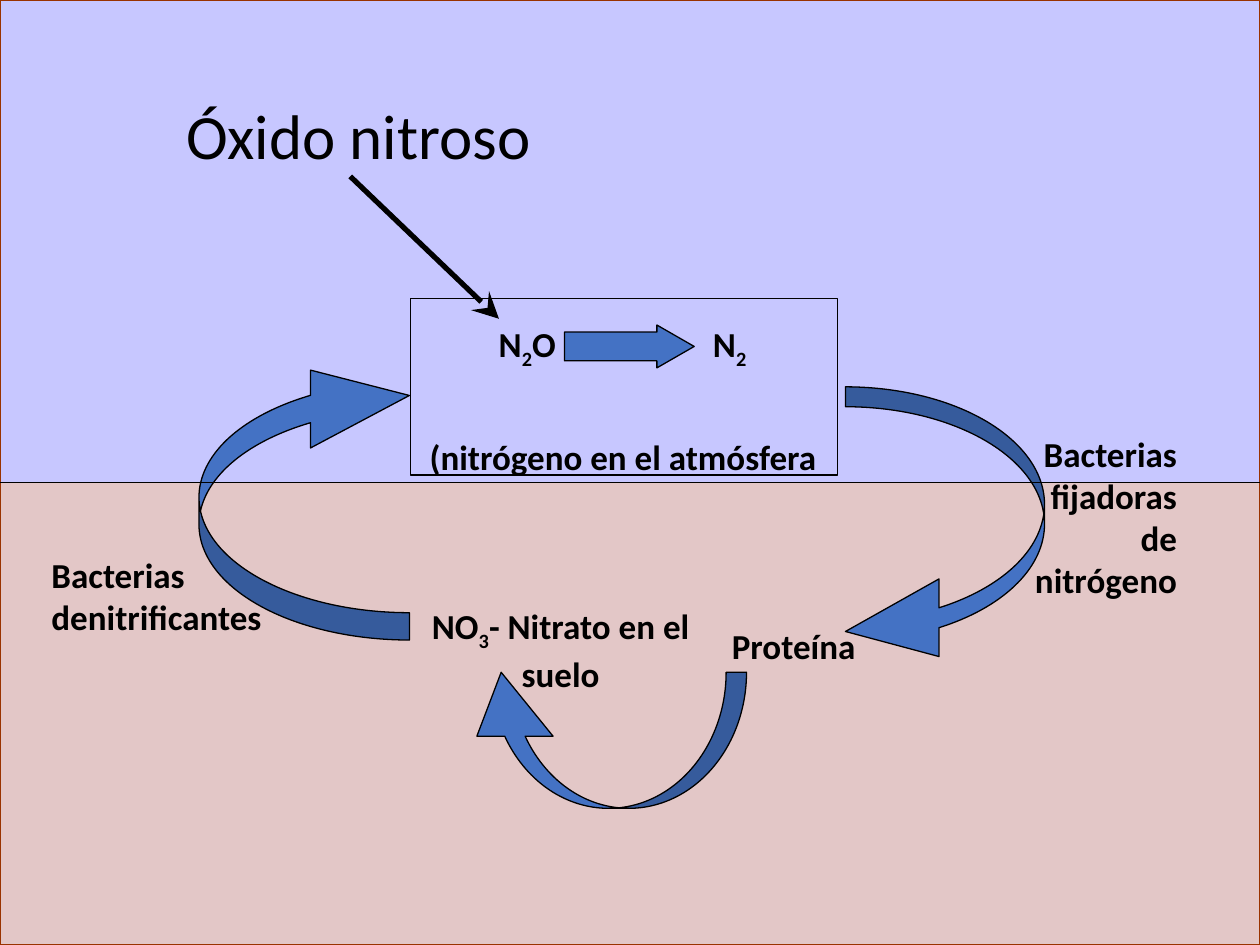
from pptx import Presentation
from pptx.dml.color import RGBColor as Rgb
from pptx.enum.shapes import MSO_CONNECTOR as Link, MSO_SHAPE as Kind
from pptx.enum.text import PP_ALIGN as Align
from pptx.oxml.ns import qn
from pptx.util import Inches, Pt
from lxml.etree import SubElement as Sub

theme = {
    "font": "Calibri", "body": 20, "head": 36,
    "ink": "000000", "arrow": "4472C4", "edge": "993300",
    "sky": "0000FF", "soil": "800000", "alpha": "22000",
}
cols, rows = 100, 75
cell = Inches(0.1)
ground = 38.3

deck = Presentation()
deck.slide_width, deck.slide_height = cols * cell, rows * cell
slide = deck.slides.add_slide(deck.slide_layouts[6])
items = slide.shapes


def draw(kind, box, fill, edge="ink", adj=(), flip=False, turn=0):
    shape = items.add_shape(kind, *[int(n * cell) for n in box])
    shape.shadow.inherit = False
    if fill:
        shape.fill.solid()
        shape.fill.fore_color.rgb = Rgb.from_string(theme[fill])
    else:
        shape.fill.background()
    shape.line.color.rgb = Rgb.from_string(theme[edge])
    shape.line.width = Pt(0.75)
    for i, part in enumerate(adj):
        shape.adjustments[i] = part
    if flip:
        for name in ("flipH", "flipV"):
            shape._element.spPr.xfrm.set(name, "1")
    shape.rotation = turn
    return shape


def write(box, parts, align=Align.LEFT, size="body", bold=True):
    frame = items.add_textbox(*[int(n * cell) for n in box]).text_frame
    frame.word_wrap = True
    para = frame.paragraphs[0]
    para.alignment = align
    for text, base in parts:
        run = para.add_run()
        run.text = text
        font = run.font
        font.name, font.size, font.bold = theme["font"], Pt(theme[size]), bold
        font.color.rgb = Rgb.from_string(theme["ink"])
        if base:
            run._r.get_or_add_rPr().set("baseline", str(base * 1000))


for fill, top, high in (("soil", ground, rows - ground), ("sky", 0, ground)):
    zone = draw(Kind.RECTANGLE, (0, top, cols, high), fill, "edge")
    tint = zone._element.spPr.find(qn("a:solidFill"))[0]
    Sub(tint, qn("a:alpha")).set("val", theme["alpha"])

write((32.8, 47.5, 23.4, 7.7),
      [("NO", 0), ("3", -25), ("- Nitrato en el suelo", 0)], Align.CENTER)
write((57.1, 49.1, 20.8, 4.4), [("Proteína", 0)])

for box, adj, flip, turn in (
    ((42.6, 47.5, 10.8, 22.5), (0.15, 0.56, 0.47), True, 270),
    ((67.1, 30.7, 15.8, 22.5), (0.1, 0.39, 0.47), False, 0),
    ((15.8, 28.3, 16.7, 22.5), (0.13, 0.37, 0.47), True, 0),
):
    draw(Kind.CURVED_LEFT_ARROW, box, "arrow", adj=adj, flip=flip, turn=turn)

write((81, 33.8, 13.4, 14.5), [("Bacterias fijadoras de nitrógeno", 0)], Align.RIGHT)
write((3.1, 43.4, 19.5, 7.7), [("Bacterias denitrificantes", 0)])

write((38.6, 25.1, 7, 4.4), [("N", 0), ("2", -25), ("O", 0)])
write((55.6, 25.1, 6, 4.4), [("N", 0), ("2", -25)])
write((31.4, 34.1, 36.1, 4.4), [("(nitrógeno en el atmósfera", 0)], Align.CENTER)

draw(Kind.RIGHT_ARROW, (44.8, 25.8, 10.3, 3.4), "arrow", adj=(0.67, 0.87))
draw(Kind.RECTANGLE, (32.6, 23.7, 33.9, 14), None)
write((13.8, 7.2, 38.2, 7.1), [("Óxido nitroso", 0)], size="head", bold=False)

for ends, wide, tip in (
    ((0, ground, cols, ground), 0.75, None),
    ((27.8, 14, 39.6, 25.3), 3, "stealth"),
):
    line = items.add_connector(Link.STRAIGHT, *[int(n * cell) for n in ends])
    line.line.color.rgb = Rgb.from_string(theme["ink"])
    line.line.width = Pt(wide)
    if tip:
        head = Sub(line.line._get_or_add_ln(), qn("a:tailEnd"))
        for name, value in (("type", tip), ("w", "lg"), ("len", "lg")):
            head.set(name, value)
    Sub(line._element.spPr, qn("a:effectLst"))

deck.save("out.pptx")
